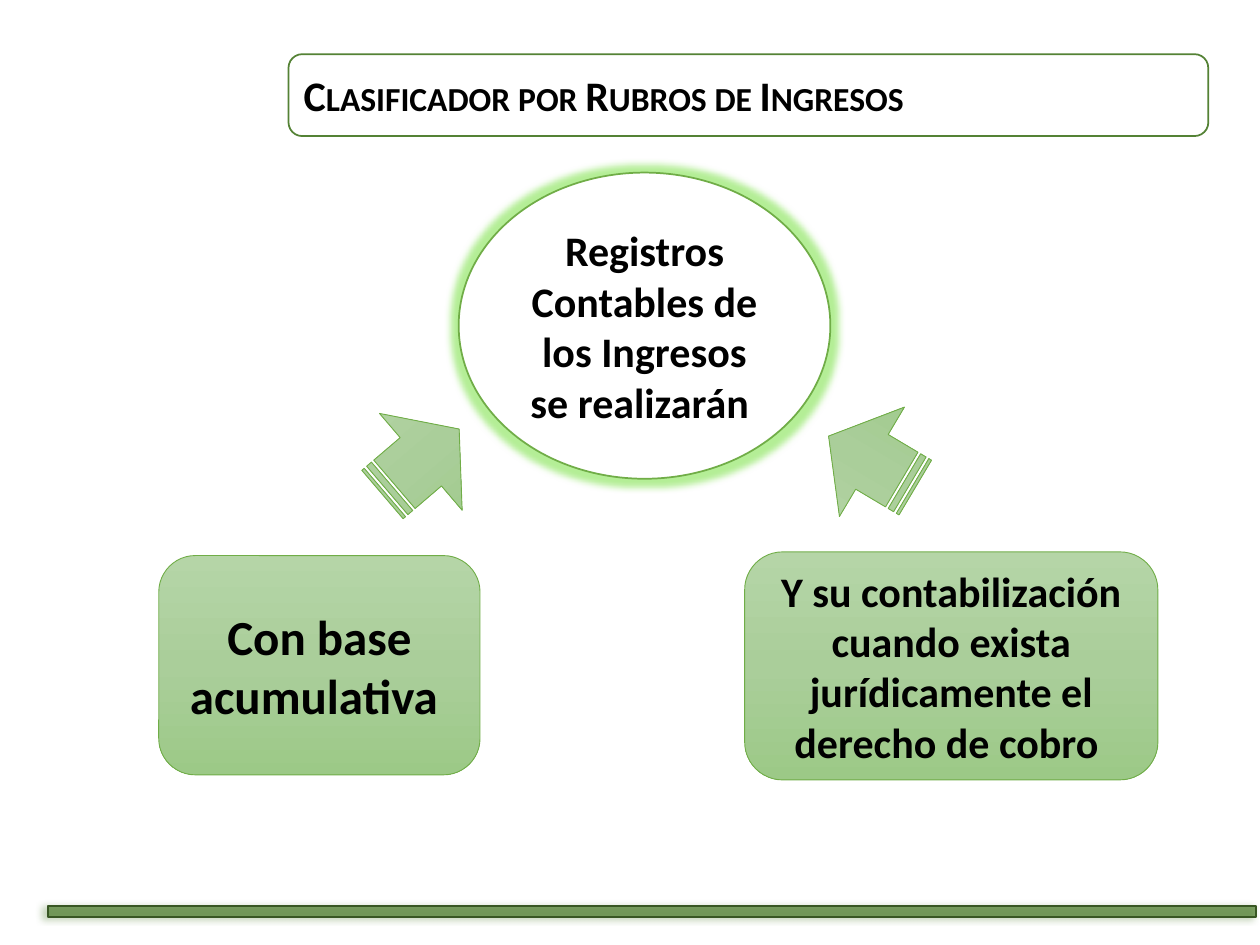
import dataclasses
import typing

import lxml.etree
import pptx
import pptx.dml.color
import pptx.enum.shapes
import pptx.enum.text
import pptx.oxml
import pptx.oxml.ns
import pptx.util

EMU_PER_PX = 9144  # 100 px to the inch
FONT = "Calibri"
COLOURS = {
    "text": "000000",
    "white": "FFFFFF",
    "green": "70AD47",
    "deep": "548235",
    "dark": "385723",
    "glow": "B4EE96",
    "fade_top": "B5D5A7",
    "fade_middle": "AACE9A",
    "fade_bottom": "9CC987",
}
FADE = {0: "fade_top", 50: "fade_middle", 100: "fade_bottom"}
NAMESPACE = pptx.oxml.ns.nsdecls("a")
SHAPES = pptx.enum.shapes.MSO_SHAPE


@dataclasses.dataclass(frozen=True)
class Block:
    kind: typing.Any
    left: int
    top: int
    width: int
    height: int
    fill: str | None = "fade"
    line: str = "green"
    line_width: float = 0.5
    rotation: float = 0
    text: str = ""
    size: int = 24


FRAME = Block(SHAPES.ROUNDED_RECTANGLE, 229, 43, 730, 65, None, "deep", 1)
FOOTER = Block(SHAPES.RECTANGLE, 38, 719, 959, 9, "deep", "dark", 1)
TOPIC = Block(SHAPES.OVAL, 364, 137, 295, 243, "white", line_width=1,
              text="Registros Contables de los Ingresos se realizarán ")
CONDITIONS = [
    Block(SHAPES.ROUNDED_RECTANGLE, 126, 441, 255, 174,
          text="Con base acumulativa ", size=28),
    Block(SHAPES.ROUNDED_RECTANGLE, 591, 438, 328, 181,
          text="Y su contabilización cuando exista jurídicamente el derecho de cobro "),
]
ARROWS = [
    Block(SHAPES.STRIPED_RIGHT_ARROW, left, 316, 80, 101, rotation=angle)
    for left, angle in ((294, 319.5), (652, 210.7))
]


def px(length: int) -> pptx.util.Emu:
    return pptx.util.Emu(length * EMU_PER_PX)


def colour(name: str) -> pptx.dml.color.RGBColor:
    return pptx.dml.color.RGBColor.from_string(COLOURS[name])


def apply_fade(shape: typing.Any) -> None:
    """Fill with the three-stop vertical green gradient."""
    stops = "".join(
        f'<a:gs pos="{position * 1000}"><a:srgbClr val="{COLOURS[name]}"/></a:gs>'
        for position, name in FADE.items()
    )
    shape.fill.background()
    properties = shape._element.spPr
    no_fill = properties.find(pptx.oxml.ns.qn("a:noFill"))
    properties.replace(no_fill, pptx.oxml.parse_xml(
        f'<a:gradFill {NAMESPACE} rotWithShape="1"><a:gsLst>{stops}</a:gsLst>'
        '<a:lin ang="5400000" scaled="0"/></a:gradFill>'
    ))


def set_effect(shape: typing.Any, effect: str) -> None:
    effects = shape._element.spPr.find(pptx.oxml.ns.qn("a:effectLst"))
    effects.append(pptx.oxml.parse_xml(effect))


def write_text(shape: typing.Any, text: str, size: int, align: typing.Any) -> typing.Any:
    frame = shape.text_frame
    frame.word_wrap = True
    frame.vertical_anchor = pptx.enum.text.MSO_ANCHOR.MIDDLE
    para = frame.paragraphs[0]
    para.alignment = align
    span = para.add_run()
    span.text = text
    formats = {"name": FONT, "size": pptx.util.Pt(size), "bold": True}
    for name, value in formats.items():
        setattr(span.font, name, value)
    span.font.color.rgb = colour("text")
    return span


def draw_block(page: typing.Any, block: Block) -> typing.Any:
    shape = page.shapes.add_shape(
        block.kind, *map(px, (block.left, block.top, block.width, block.height))
    )
    shape.rotation = block.rotation
    shape.shadow.inherit = False
    if block.fill == "fade":
        apply_fade(shape)
    elif block.fill is None:
        shape.fill.background()
    else:
        shape.fill.solid()
        shape.fill.fore_color.rgb = colour(block.fill)
    shape.line.color.rgb = colour(block.line)
    shape.line.width = pptx.util.Pt(block.line_width)
    if block.text:
        write_text(shape, block.text, block.size, pptx.enum.text.PP_ALIGN.CENTER)
    return shape


def draw_title(page: typing.Any) -> None:
    title = page.shapes.title
    position = {"left": 231, "top": 52, "width": 651, "height": 51}
    for name, value in position.items():
        setattr(title, name, px(value))
    span = write_text(title, "Clasificador por Rubros de Ingresos", 24,
                      pptx.enum.text.PP_ALIGN.LEFT)
    span.font._element.set("cap", "small")
    title.text_frame.paragraphs[0].line_spacing = 0.9
    title.text_frame.auto_size = pptx.enum.text.MSO_AUTO_SIZE.NONE


def draw_footer(page: typing.Any) -> None:
    footer = draw_block(page, FOOTER)
    fill_colour = footer._element.spPr.find(
        f"{pptx.oxml.ns.qn('a:solidFill')}/{pptx.oxml.ns.qn('a:srgbClr')}"
    )
    lxml.etree.SubElement(fill_colour, pptx.oxml.ns.qn("a:alpha"), val="75000")
    set_effect(footer, (
        f'<a:outerShdw {NAMESPACE} blurRad="50800" dist="38100" dir="10800000">'
        f'<a:srgbClr val="{COLOURS["deep"]}"><a:alpha val="40000"/></a:srgbClr>'
        '</a:outerShdw>'
    ))


def main() -> None:
    deck = pptx.Presentation()
    deck.slide_width, deck.slide_height = px(1000), px(750)
    page = deck.slides.add_slide(deck.slide_layouts[5])
    draw_block(page, FRAME)
    draw_footer(page)
    draw_title(page)
    topic = draw_block(page, TOPIC)
    set_effect(topic, (
        f'<a:glow {NAMESPACE} rad="101600">'
        f'<a:srgbClr val="{COLOURS["glow"]}"/></a:glow>'
    ))
    for block in CONDITIONS + ARROWS:
        draw_block(page, block)
    deck.save("out.pptx")


if __name__ == "__main__":
    main()
